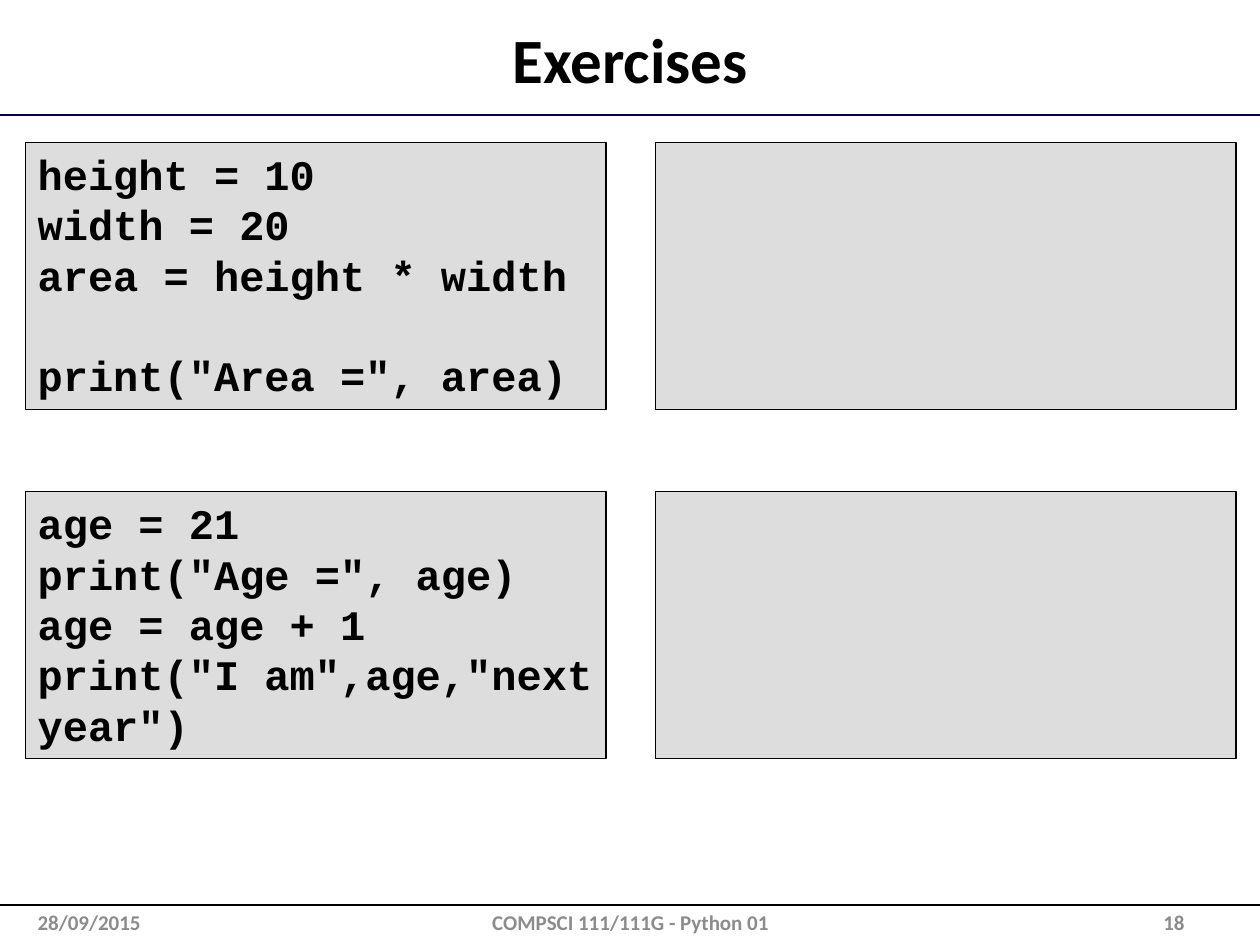
from lxml import etree
from pptx import Presentation
from pptx.dml.color import RGBColor
from pptx.enum import shapes, text
from pptx.oxml import ns
from pptx.util import Inches, Pt

BLACK = RGBColor(0x00, 0x00, 0x00)
NAVY = RGBColor(0x00, 0x00, 0x66)
GREY = RGBColor(0x8C, 0x8C, 0x8C)
PANEL = RGBColor(0xDD, 0xDD, 0xDD)

TITLE = "Exercises"
EXERCISES = [
    ["height = 10", "width = 20", "area = height * width", "", 'print("Area =", area)'],
    ["age = 21", 'print("Age =", age)', "age = age + 1", 'print("I am",age,"next year")'],
]
FOOTERS = [
    ("28/09/2015", 0.2, 2.33, text.PP_ALIGN.LEFT),
    ("COMPSCI 111/111G - Python 01", 3.42, 3.17, text.PP_ALIGN.CENTER),
    ("18", 7.17, 2.33, text.PP_ALIGN.RIGHT),
]
RULES = [(0.91, NAVY), (7.18, BLACK)]

PANEL_LEFT, PANEL_TOP = 0.2, 1.13
PANEL_WIDTH, PANEL_HEIGHT = 4.61, 2.12
COLUMN_STEP, ROW_STEP = 5, 2.77
CODE_LINE = 28.7


def add_run(paragraph, content, font, size, color):
    run = paragraph.add_run()
    run.text = content
    run.font.name = font
    run.font.size = Pt(size)
    run.font.bold = True
    run.font.color.rgb = color


def add_rule(slide, top, color):
    rule = slide.shapes.add_connector(
        shapes.MSO_CONNECTOR.STRAIGHT, 0, Inches(top), Inches(10), Inches(top))
    rule.line.color.rgb = color
    rule.line.width = Pt(1)
    etree.SubElement(rule._element.spPr, ns.qn("a:effectLst"))


def add_panel(slide, column, row):
    panel = slide.shapes.add_shape(
        shapes.MSO_SHAPE.RECTANGLE,
        Inches(PANEL_LEFT + column * COLUMN_STEP), Inches(PANEL_TOP + row * ROW_STEP),
        Inches(PANEL_WIDTH), Inches(PANEL_HEIGHT))
    panel.shadow.inherit = False
    panel.fill.solid()
    panel.fill.fore_color.rgb = PANEL
    panel.line.color.rgb = BLACK
    panel.line.width = Pt(0.75)
    return panel


def write_code(panel, lines):
    frame = panel.text_frame
    frame.word_wrap = True
    frame.vertical_anchor = text.MSO_ANCHOR.TOP
    paragraph, gap = frame.paragraphs[0], 0
    for index, line in enumerate(lines):
        if not line:
            gap += CODE_LINE
            continue
        if index:
            paragraph = frame.add_paragraph()
        paragraph.alignment = text.PP_ALIGN.LEFT
        paragraph.space_before = Pt(gap)
        add_run(paragraph, line, "Courier New", 24, BLACK)
        gap = 0


def add_footer(slide, content, left, width, alignment):
    box = slide.shapes.add_textbox(Inches(left), Inches(7.18), Inches(width), Inches(0.27))
    frame = box.text_frame
    frame.word_wrap = True
    frame.vertical_anchor = text.MSO_ANCHOR.MIDDLE
    frame.paragraphs[0].alignment = alignment
    add_run(frame.paragraphs[0], content, "Calibri", 12, GREY)


def main():
    presentation = Presentation()
    presentation.slide_width, presentation.slide_height = Inches(10), Inches(7.5)
    slide = presentation.slides.add_slide(presentation.slide_layouts[5])

    title = slide.shapes.title
    title.left, title.top = Inches(0.1), Inches(0.12)
    title.width, title.height = Inches(9.8), Inches(0.69)
    title.text_frame.vertical_anchor = text.MSO_ANCHOR.MIDDLE
    title.text_frame.paragraphs[0].alignment = text.PP_ALIGN.CENTER
    add_run(title.text_frame.paragraphs[0], TITLE, "Calibri", 36, BLACK)

    for rule in RULES:
        add_rule(slide, *rule)
    for row, lines in enumerate(EXERCISES):
        write_code(add_panel(slide, 0, row), lines)
        add_panel(slide, 1, row)
    for footer in FOOTERS:
        add_footer(slide, *footer)

    presentation.save("out.pptx")


if __name__ == "__main__":
    main()
